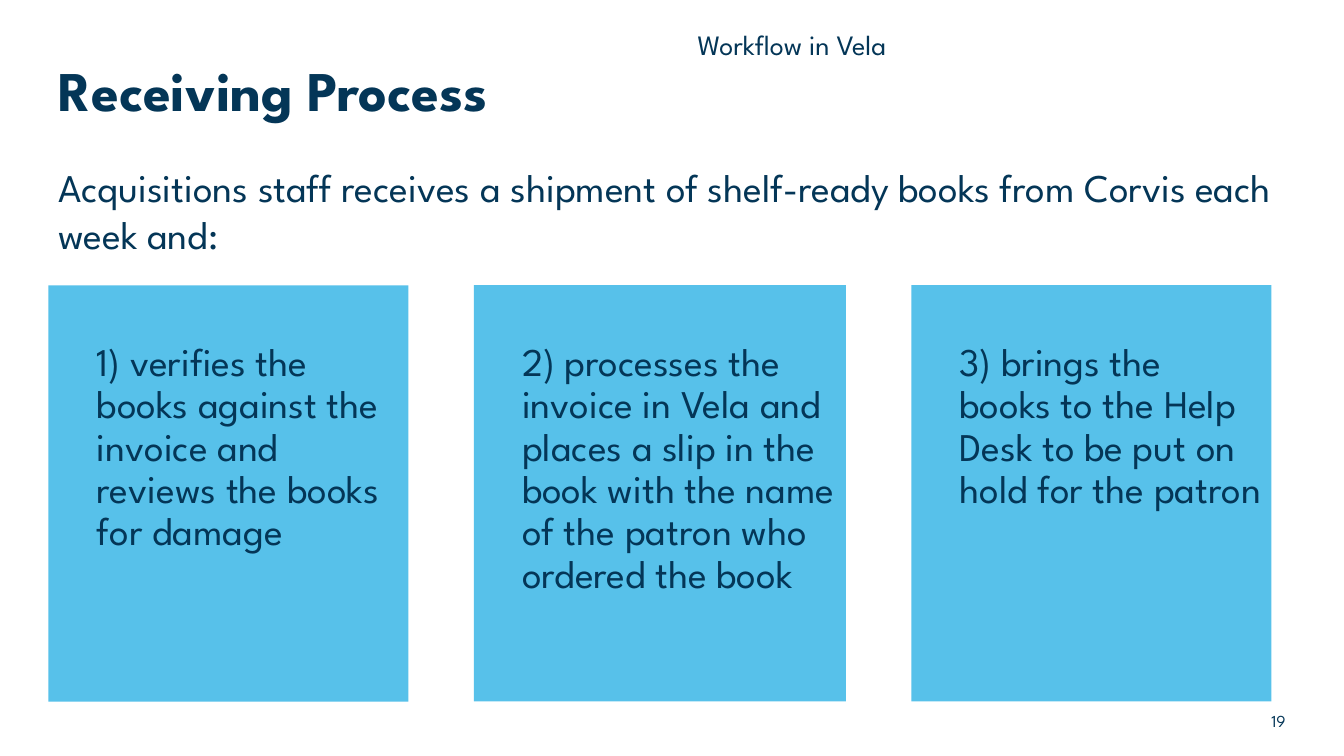
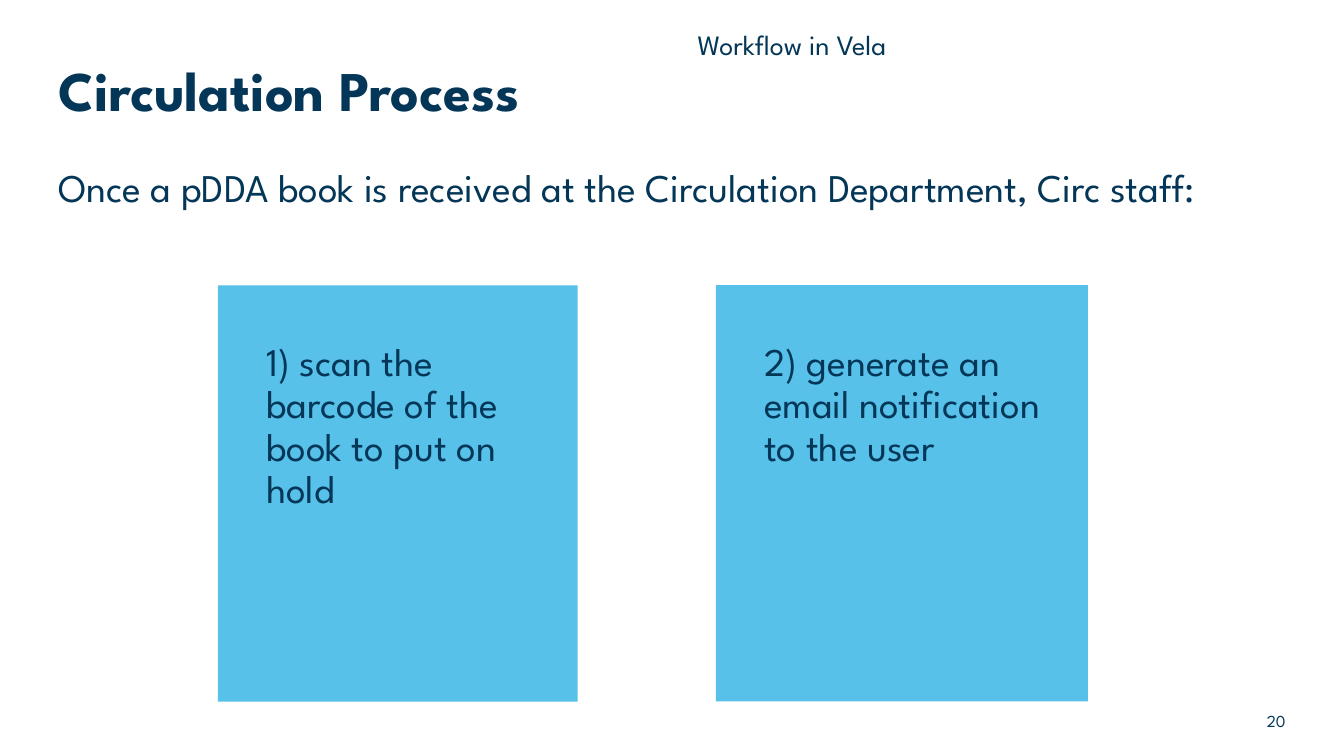
import itertools

import pptx
import pptx.dml.color
import pptx.enum.shapes
import pptx.enum.text
import pptx.oxml.ns
import pptx.util
from lxml import etree

# Content
SECTION = "Workflow in Vela"
SLIDES = [
    {
        "number": 19,
        "title": "Receiving Process",
        "intro": "Acquisitions staff receives a shipment of shelf-ready books "
                 "from Corvis each week and:",
        "steps": [
            "1) verifies the books against the invoice and reviews the books for damage",
            "2) processes the invoice in Vela and places a slip in the book "
            "with the name of the patron who ordered the book",
            "3) brings the books to the Help Desk to be put on hold for the patron",
        ],
        "left": 0.48, "gap": 0.65,
    },
    {
        "number": 20,
        "title": "Circulation Process",
        "intro": "Once a pDDA book is received at the Circulation Department, Circ staff:",
        "steps": [
            "1) scan the barcode of the book to put on hold",
            "2) generate an email notification to the user",
        ],
        "left": 2.16, "gap": 1.37,
    },
]

# Theme
THEME = {
    "font": "League Spartan", "ink": "043657", "card": "57C1EA",
    "title": 40, "body": 28, "section": 20, "number": 12,
}
# Shared places, in inches: left, top, width, height
MARGIN = 0.48
PLACES = {
    "title": (MARGIN, 0.4, 12.37, 1.06),
    "number": (9.85, 6.95, 3, 0.4),
    "intro": (MARGIN, 1.57, 12.53, 1.04),
    "section": (6.82, 0.11, 3.24, 0.6),
}
CARD_TOP, CARD_HEIGHT = 2.83, 4.13
CARD_WIDTHS = (3.57, 3.69)  # narrow and wide cards alternate
CARD_INDENT, CARD_PAD = 0.38, 0.57

Inches = pptx.util.Inches
ANCHOR = pptx.enum.text.MSO_ANCHOR
ALIGN = pptx.enum.text.PP_ALIGN


def rgb(name):
    return pptx.dml.color.RGBColor.from_string(THEME[name])


def place(sp, box):
    sp.left, sp.top, sp.width, sp.height = map(Inches, box)


def write(sp, text, size="body", bold=False, align=ALIGN.LEFT, anchor=ANCHOR.TOP,
          spacing=1.0, indent=0, top=0.05, bottom=0.05):
    """Put one formatted paragraph into a shape."""
    tf = sp.text_frame
    tf.word_wrap = True
    tf.auto_size = pptx.enum.text.MSO_AUTO_SIZE.NONE
    tf.vertical_anchor = anchor
    tf.margin_left = tf.margin_right = Inches(0.1)
    tf.margin_top, tf.margin_bottom = Inches(top), Inches(bottom)
    tf.text = text
    p = tf.paragraphs[0]
    p.alignment, p.line_spacing = align, spacing
    p.space_before = pptx.util.Pt(0)
    pPr = p._p.get_or_add_pPr()
    pPr.set("marL", str(Inches(indent)))
    pPr.set("indent", "0")
    etree.SubElement(pPr, pptx.oxml.ns.qn("a:buNone"))
    font = p.runs[0].font
    font.name, font.size, font.bold = THEME["font"], pptx.util.Pt(THEME[size]), bold
    font.color.rgb = rgb("ink")


def add_text(s, place_name, text, **fmt):
    write(s.shapes.add_textbox(*map(Inches, PLACES[place_name])), text, **fmt)


def add_cards(s, steps, left, gap):
    """Fill the body placeholder with the first step, then add matching cards."""
    for i, (step, width) in enumerate(zip(steps, itertools.cycle(CARD_WIDTHS))):
        box = (left, CARD_TOP, width, CARD_HEIGHT)
        if i == 0:
            sp = s.placeholders[1]
            place(sp, box)
        else:
            sp = s.shapes.add_shape(pptx.enum.shapes.MSO_SHAPE.RECTANGLE,
                                    *map(Inches, box))
            sp.shadow.inherit = False
        sp.fill.solid()
        sp.fill.fore_color.rgb = rgb("card")
        sp.line.fill.background()
        write(sp, step, spacing=0.9, indent=CARD_INDENT, top=CARD_PAD)
        left += width + gap


def add_slide(prs, data):
    s = prs.slides.add_slide(prs.slide_layouts[1])
    place(s.shapes.title, PLACES["title"])
    write(s.shapes.title, data["title"], size="title", bold=True,
          anchor=ANCHOR.MIDDLE, spacing=0.9)
    add_text(s, "number", str(data["number"]), size="number",
             align=ALIGN.RIGHT, anchor=ANCHOR.MIDDLE)
    add_cards(s, data["steps"], data["left"], data["gap"])
    add_text(s, "intro", data["intro"])
    add_text(s, "section", SECTION, size="section", anchor=ANCHOR.BOTTOM,
             spacing=0.9, bottom=0.1)


def main():
    prs = pptx.Presentation()
    prs.slide_width, prs.slide_height = Inches(13.33), Inches(7.5)
    for data in SLIDES:
        add_slide(prs, data)
    prs.save("out.pptx")


if __name__ == "__main__":
    main()
